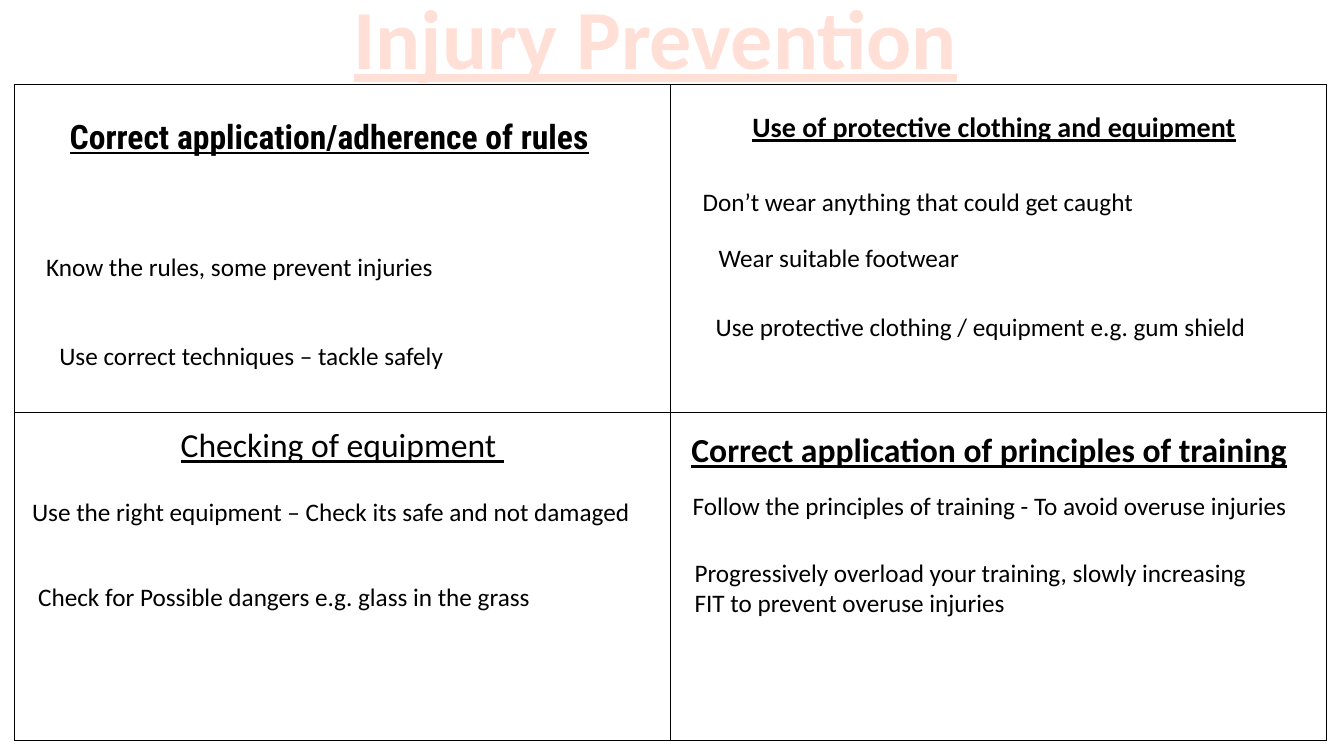
from lxml import etree
from pptx import Presentation
from pptx.dml.color import RGBColor
from pptx.enum.text import MSO_ANCHOR, MSO_AUTO_SIZE, PP_ALIGN
from pptx.oxml.ns import qn
from pptx.util import Inches, Pt

CENTER, LEFT = PP_ALIGN.CENTER, PP_ALIGN.LEFT
MIDDLE = MSO_ANCHOR.MIDDLE
NO_FIT, GROW = MSO_AUTO_SIZE.NONE, MSO_AUTO_SIZE.SHAPE_TO_FIT_TEXT
TITLE_ONLY = 5
BLACK, WHITE, PEACH = "000000", "FFFFFF", "FFDFD6"
BODY_FONT, CONDENSED_FONT = "Calibri", "Roboto Condensed"

HEADINGS = [
    ("Correct application/adherence of rules", 0.36, 1.1, 5.81, 0.5, 24, CONDENSED_FONT, True, CENTER),
    ("Use of protective clothing and equipment", 6.88, 1.04, 5.96, 0.44, 20, BODY_FONT, True, CENTER),
    ("Checking of equipment ", 0.49, 4.16, 5.81, 0.5, 24, BODY_FONT, False, CENTER),
    ("Correct application of principles of training", 6.76, 4.21, 6.16, 0.5, 24, BODY_FONT, True, LEFT),
]
POINTS = [
    ("Know the rules, some prevent injuries", 0.36, 2.44, 4.09),
    ("Use correct techniques – tackle safely", 0.49, 3.33, 4.07),
    ("Don’t wear anything that could get caught", 6.87, 1.8, 4.54),
    ("Wear suitable footwear", 7.03, 2.35, 2.63),
    ("Use protective clothing / equipment e.g. gum shield", 7, 3.04, 5.52),
    ("Use the right equipment – Check its safe and not damaged", 0.22, 4.87, 6.2),
    ("Check for Possible dangers e.g. glass in the grass", 0.28, 5.72, 5.15),
    ("Follow the principles of training - To avoid overuse injuries", 6.77, 4.82, 6.28),
]
OVERLOAD = "Progressively overload your training, slowly increasing FIT to prevent overuse injuries"


def color(value):
    return RGBColor.from_string(value)


def write(text_frame, text, size, font=BODY_FONT, fill=BLACK, bold=False, underline=False, align=LEFT):
    text_frame.text = text
    paragraph = text_frame.paragraphs[0]
    paragraph.alignment = align
    for run in paragraph.runs:
        run.font.name = font
        run.font.size = Pt(size)
        run.font.bold = bold
        run.font.underline = underline
        run.font.color.rgb = color(fill)


def add_text(slide, text, left, top, width, height, size=18, wrap=True, **style):
    box = slide.shapes.add_textbox(Inches(left), Inches(top), Inches(width), Inches(height))
    text_frame = box.text_frame
    text_frame.word_wrap = wrap
    text_frame.auto_size = GROW
    write(text_frame, text, size, **style)


def set_title(slide, text):
    title = slide.shapes.title
    title.left, title.top = Inches(0.75), Inches(0)
    title.width, title.height = Inches(11.5), Inches(0.84)
    text_frame = title.text_frame
    text_frame.auto_size = NO_FIT
    text_frame.vertical_anchor = MIDDLE
    write(text_frame, text, 60, fill=PEACH, bold=True, underline=True, align=CENTER)
    text_frame.paragraphs[0].line_spacing = 0.9


def set_borders(cell, line_color, width):
    properties = cell._tc.get_or_add_tcPr()
    for index, side in enumerate(("lnL", "lnR", "lnT", "lnB")):
        line = etree.Element(qn(f"a:{side}"), w=str(Pt(width)))
        fill = etree.SubElement(line, qn("a:solidFill"))
        etree.SubElement(fill, qn("a:srgbClr"), val=line_color)
        properties.insert(index, line)


def add_grid(slide):
    frame = slide.shapes.add_table(2, 2, Inches(0.14), Inches(0.84), Inches(13.02), Inches(6.51))
    for cell in frame.table.iter_cells():
        cell.fill.solid()
        cell.fill.fore_color.rgb = color(WHITE)
        set_borders(cell, BLACK, 1)


def main():
    presentation = Presentation()
    presentation.slide_width = Inches(13.33)
    presentation.slide_height = Inches(7.5)
    slide = presentation.slides.add_slide(presentation.slide_layouts[TITLE_ONLY])
    set_title(slide, "Injury Prevention")
    add_grid(slide)
    for text, left, top, width, height, size, font, bold, align in HEADINGS:
        add_text(slide, text, left, top, width, height, size,
                 font=font, bold=bold, underline=True, align=align)
    for text, left, top, width in POINTS:
        add_text(slide, text, left, top, width, 0.4, wrap=False)
    add_text(slide, OVERLOAD, 6.79, 5.48, 5.75, 0.71)
    presentation.save("out.pptx")


if __name__ == "__main__":
    main()
